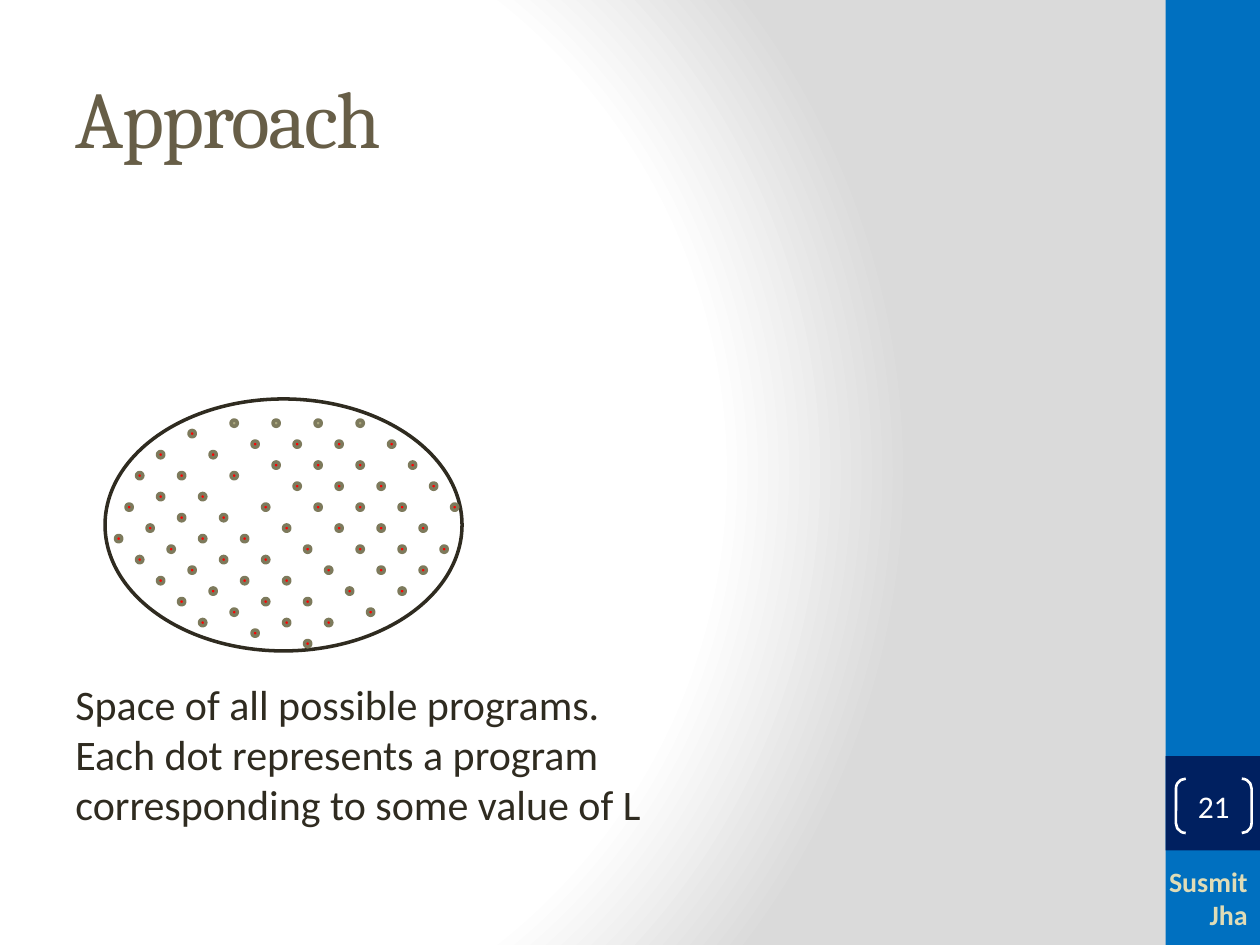
"""Build the Approach slide: a space of candidate programs drawn as dots in an ellipse."""
from typing import NamedTuple

from pptx import Presentation
from pptx.dml.color import RGBColor
from pptx.enum.shapes import MSO_SHAPE
from pptx.enum.text import MSO_ANCHOR, PP_ALIGN
from pptx.oxml import parse_xml
from pptx.oxml.ns import nsdecls
from pptx.util import Pt

COLORS = {
    "white": "FFFFFF", "grey": "DADADA", "blue": "0070C0", "navy": "002060",
    "title": "675E47", "ink": "2F2B20", "cream": "DFDCB7",
    "red": "FF0000", "olive": "A9A57C", "dot_edge": "7D7A5C",
}
DOT_SIZE = 3.6
DOT_STEP = 12


class Box(NamedTuple):
    left: float
    top: float
    width: float
    height: float


class Diagonal(NamedTuple):
    left: float
    top: float
    count: int
    color: str = "red"


DIAGONALS = [
    Diagonal(108, 246, 1), Diagonal(150, 288, 3), Diagonal(90, 258, 5),
    Diagonal(186, 354, 1), Diagonal(78, 270, 4), Diagonal(162, 354, 2),
    Diagonal(120, 258, 2), Diagonal(144, 252, 6), Diagonal(186, 324, 3),
    Diagonal(150, 318, 3), Diagonal(126, 318, 3), Diagonal(216, 324, 2),
    Diagonal(168, 252, 7), Diagonal(192, 252, 6), Diagonal(222, 252, 4),
    Diagonal(72, 288, 7), Diagonal(66, 306, 5),
    *(Diagonal(left, 240, 1, "olive") for left in range(132, 205, 24)),
]


def rgb(name: str) -> RGBColor:
    return RGBColor.from_string(COLORS[name])


def points(box: Box) -> list:
    return [Pt(value) for value in box]


def set_background(slide) -> None:
    stops = "".join(
        f'<a:gs pos="{position * 1000}"><a:srgbClr val="{COLORS[name]}"/></a:gs>'
        for position, name in ((0, "white"), (75, "white"), (100, "grey"))
    )
    slide.element.cSld.insert(0, parse_xml(
        f'<p:bg {nsdecls("p", "a")}><p:bgPr><a:gradFill rotWithShape="1">'
        f'<a:gsLst>{stops}</a:gsLst><a:path path="circle">'
        '<a:fillToRect l="20000" t="50000" r="100000" b="50000"/></a:path>'
        '</a:gradFill><a:effectLst/></p:bgPr></p:bg>'
    ))


def add_shape(slide, kind, box: Box, fill: str = "", line: str = "", width: float = 2):
    shape = slide.shapes.add_shape(kind, *points(box))
    shape.shadow.inherit = False
    if fill:
        shape.fill.solid()
        shape.fill.fore_color.rgb = rgb(fill)
    else:
        shape.fill.background()
    if line:
        shape.line.color.rgb = rgb(line)
        shape.line.width = Pt(width)
    else:
        shape.line.fill.background()
    return shape


def write_text(shape, text: str, *, size: float, color: str, font: str = "Calibri",
               bold: bool = False, align=PP_ALIGN.LEFT, anchor=MSO_ANCHOR.MIDDLE,
               spacing: float = 0) -> None:
    frame = shape.text_frame
    frame.word_wrap = True
    frame.vertical_anchor = anchor
    paragraph = frame.paragraphs[0]
    paragraph.alignment = align
    run = paragraph.add_run()
    run.text = text
    run.font.size = Pt(size)
    run.font.name = font
    run.font.bold = bold
    run.font.color.rgb = rgb(color)
    if spacing:
        run.font._element.set("spc", str(int(spacing * 100)))


def add_diagonal(slide, diagonal: Diagonal) -> None:
    for index in range(diagonal.count):
        offset = index * DOT_STEP
        box = Box(diagonal.left + offset, diagonal.top + offset, DOT_SIZE, DOT_SIZE)
        add_shape(slide, MSO_SHAPE.OVAL, box, fill=diagonal.color, line="dot_edge")


def add_page_number(slide, number: str) -> None:
    bracket = add_shape(slide, MSO_SHAPE.DOUBLE_BRACKET, Box(672, 445, 43.2, 31),
                        line="white", width=1.5)
    bracket.adjustments[0] = 0.18
    frame = bracket.text_frame
    frame.margin_left = frame.margin_right = frame.margin_top = frame.margin_bottom = 0
    write_text(bracket, number, size=18, color="white", align=PP_ALIGN.CENTER)


def main() -> None:
    presentation = Presentation()
    presentation.slide_width, presentation.slide_height = Pt(720), Pt(540)
    slide = presentation.slides.add_slide(presentation.slide_layouts[5])
    set_background(slide)

    title = slide.shapes.title
    title.left, title.top, title.width, title.height = points(Box(36, 21.6, 600, 90))
    write_text(title, "Approach", size=46, color="title", font="Cambria", spacing=-1)

    add_shape(slide, MSO_SHAPE.RECTANGLE, Box(666, 0, 54, 540), fill="blue")
    add_shape(slide, MSO_SHAPE.RECTANGLE, Box(666, 432, 54, 54), fill="navy")

    add_shape(slide, MSO_SHAPE.OVAL, Box(60, 228, 204, 144), line="ink")
    for diagonal in DIAGONALS:
        add_diagonal(slide, diagonal)

    caption = slide.shapes.add_textbox(*points(Box(36, 384, 348, 94.5)))
    write_text(caption, "Space of all possible programs. Each dot represents a program "
               "corresponding to some value of L", size=24, color="ink",
               anchor=MSO_ANCHOR.TOP)
    author = slide.shapes.add_textbox(*points(Box(636, 486, 84, 54)))
    write_text(author, "Susmit Jha", size=16, color="cream", bold=True,
               align=PP_ALIGN.RIGHT)
    add_page_number(slide, "21")
    presentation.save("out.pptx")


if __name__ == "__main__":
    main()
